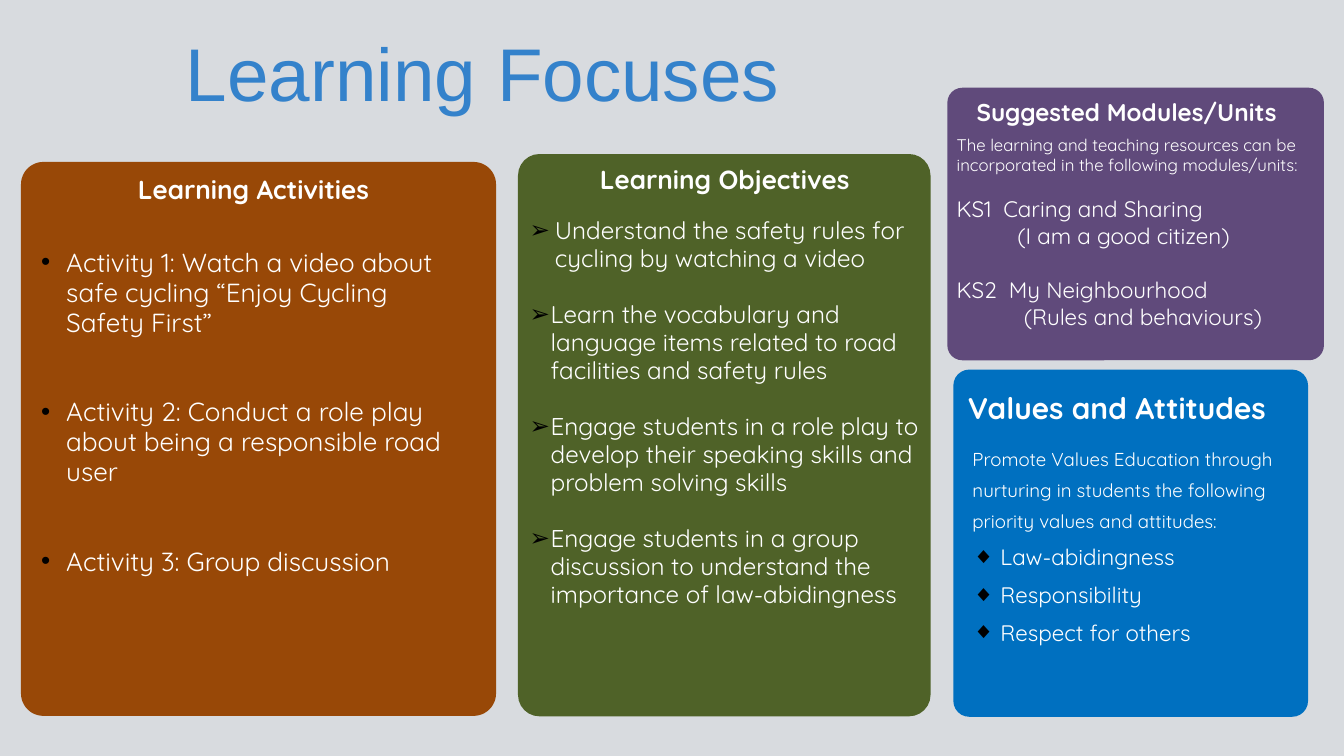
import pptx
import pptx.dml.color
import pptx.enum.shapes
import pptx.enum.text
import pptx.oxml
import pptx.oxml.ns
import pptx.util

Pt = pptx.util.Pt
ALIGN = pptx.enum.text.PP_ALIGN

COLOURS = {
    "background": "D8DBDF",
    "title": "3482CB",
    "activities": "984807",
    "objectives": "4F6228",
    "modules": "604A7B",
    "values": "0070C0",
    "text": "FFFFFF",
    "bullet": "000000",
}
BODY_FONT = "Quicksand"

ACTIVITIES = [
    "Activity 1: Watch a video about safe cycling “Enjoy Cycling Safety First”",
    "Activity 2: Conduct a role play about being a responsible road user",
    "Activity 3: Group discussion",
]
OBJECTIVES = [
    "Understand the safety rules for cycling by watching a video",
    "Learn the vocabulary and language items related to road facilities and safety rules",
    "Engage students in a role play to develop their speaking skills and problem solving skills",
    "Engage students in a group discussion to understand the importance of law-abidingness",
]
# stage, module, unit, module tab, unit indent, gap above
MODULES = [
    ("KS1", "Caring and Sharing", "(I am a good citizen)", 50, 65, 22),
    ("KS2", "My Neighbourhood", "(Rules and behaviours)", 56, 72, 29),
]
VALUES = ["Law-abidingness", "Responsibility", "Respect for others"]


def rgb(name):
    return pptx.dml.color.RGBColor.from_string(COLOURS[name])


def add_panel(slide, colour, left, top, width, height, radius):
    panel = slide.shapes.add_shape(
        pptx.enum.shapes.MSO_SHAPE.ROUNDED_RECTANGLE,
        Pt(left), Pt(top), Pt(width), Pt(height))
    panel.adjustments[0] = radius / min(width, height)
    panel.shadow.inherit = False
    panel.fill.solid()
    panel.fill.fore_color.rgb = rgb(colour)
    panel.line.fill.background()


def add_text_frame(slide, left, top, width, height):
    frame = slide.shapes.add_textbox(Pt(left), Pt(top), Pt(width), Pt(height)).text_frame
    frame.word_wrap = True
    frame.margin_left = frame.margin_top = frame.margin_right = frame.margin_bottom = 0
    return frame


def add_paragraph(frame, text, size, spacing=None, before=0, font=BODY_FONT,
                  colour="text", bold=False):
    """Write into the frame's empty first paragraph, or into a new one."""
    first = frame.paragraphs[0]
    paragraph = frame.add_paragraph() if first.runs else first
    if spacing:
        paragraph.line_spacing = spacing
    if before:
        paragraph.space_before = Pt(before)
    run = paragraph.add_run()
    run.text = text
    run.font.name = font
    run.font.size = Pt(size)
    run.font.bold = bold
    run.font.color.rgb = rgb(colour)
    return paragraph


def add_heading(slide, text, left, top, width, height, size, **style):
    frame = add_text_frame(slide, left, top, width, height)
    add_paragraph(frame, text, size, 1.04, **style).alignment = ALIGN.CENTER


def append_property(paragraph, tag):
    properties = paragraph._p.get_or_add_pPr()
    element = pptx.oxml.parse_xml(f"<a:{tag} {pptx.oxml.ns.nsdecls('a')}/>")
    properties.append(element)
    return element


def add_child(parent, tag, **attributes):
    child = pptx.oxml.parse_xml(f"<a:{tag} {pptx.oxml.ns.nsdecls('a')}/>")
    for key, value in attributes.items():
        child.set(key, str(value))
    parent.append(child)


def set_indent(paragraph, left, first=0):
    properties = paragraph._p.get_or_add_pPr()
    properties.set("marL", str(Pt(left)))
    properties.set("indent", str(Pt(first)))


def set_bullet(paragraph, mark, hang):
    set_indent(paragraph, hang, -hang)
    add_child(append_property(paragraph, "buClr"), "srgbClr", val=COLOURS["bullet"])
    append_property(paragraph, "buFont").set("typeface", "Arial")
    append_property(paragraph, "buChar").set("char", mark)


def set_tab(paragraph, position):
    add_child(append_property(paragraph, "tabLst"), "tab", pos=Pt(position), algn="l")


def add_bullets(frame, items, mark, hangs, size, spacing, gap=0):
    for index, (item, hang) in enumerate(zip(items, hangs)):
        paragraph = add_paragraph(frame, item, size, spacing, gap if index else 0)
        set_bullet(paragraph, mark, hang)


def add_activities(slide):
    add_panel(slide, "activities", 22.5, 173.5, 509, 593.5, 24)
    add_heading(slide, "Learning Activities", 129, 184.5, 285, 35, 28, bold=True)
    frame = add_text_frame(slide, 44, 265.5, 448, 356)
    add_bullets(frame, ACTIVITIES, "•", [27] * 3, 28, Pt(32), gap=64)


def add_objectives(slide):
    add_panel(slide, "objectives", 555, 165, 442, 602.5, 23)
    add_heading(slide, "Learning Objectives", 623, 173.5, 307, 35, 28, bold=True)
    frame = add_text_frame(slide, 567.5, 232, 419, 515)
    add_bullets(frame, OBJECTIVES, "➢", [27, 22.5, 22.5, 22.5], 26, Pt(30), gap=30)


def add_values(slide):
    add_panel(slide, "values", 1021.5, 396, 380, 372, 17)
    add_heading(slide, "Values and Attitudes", 1025, 416, 343.5, 40, 32, bold=True)
    frame = add_text_frame(slide, 1042, 470, 343.5, 258)
    add_paragraph(frame, "Promote Values Education through nurturing in students "
                  "the following priority values and attitudes:", 20, 1.4)
    add_bullets(frame, VALUES, "◆", [30] * 3, 24, 1.4)


def add_modules(slide):
    add_panel(slide, "modules", 1015, 94, 403.5, 292, 16)
    add_heading(slide, "Suggested Modules/Units", 1025, 103, 364.5, 46, 26, bold=True)
    frame = add_text_frame(slide, 1025, 144, 399.5, 232.5)
    add_paragraph(frame, "The learning and teaching resources can be incorporated "
                  "in the following modules/units:", 18)
    for stage, module, unit, tab, indent, gap in MODULES:
        set_tab(add_paragraph(frame, f"{stage}\t{module}", 24, before=gap), tab)
        set_indent(add_paragraph(frame, unit, 24), indent)


def main():
    deck = pptx.Presentation()
    deck.slide_width, deck.slide_height = Pt(1440), Pt(810)
    slide = deck.slides.add_slide(deck.slide_layouts[6])
    slide.background.fill.solid()
    slide.background.fill.fore_color.rgb = rgb("background")

    add_activities(slide)
    add_objectives(slide)
    add_values(slide)
    add_heading(slide, "Learning Focuses", 0, 24.5, 1034.5, 101, 80,
                font="Arial", colour="title")
    add_modules(slide)
    deck.save("out.pptx")


if __name__ == "__main__":
    main()
